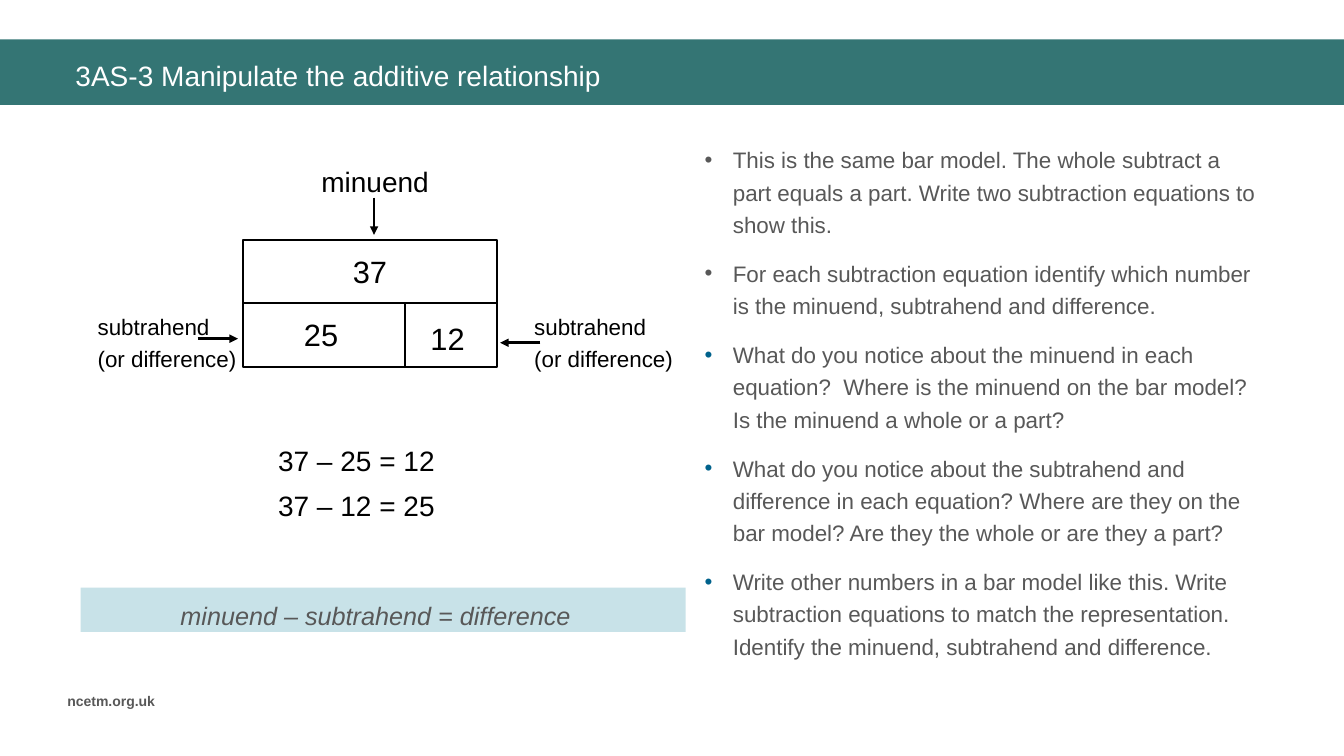
from dataclasses import dataclass

from lxml import etree
from pptx import Presentation
from pptx import util as u
from pptx.dml.color import RGBColor
from pptx.enum import shapes as kinds, text as txt
from pptx.oxml.ns import qn


@dataclass(frozen=True)
class Theme:
    font: str = "Arial"
    teal: str = "347574"
    pale: str = "C8E2E8"
    grey: str = "585858"
    blue: str = "00628C"
    black: str = "000000"
    white: str = "FFFFFF"
    footer: int = 10
    body: int = 16
    rule: int = 18
    heading: int = 20
    number: int = 22


@dataclass(frozen=True)
class Line:
    start: tuple[float, float]
    end: tuple[float, float]
    weight: float
    arrow: bool = False


@dataclass(frozen=True)
class Label:
    words: str
    box: tuple[float, float, float, float]
    size: int
    align: txt.PP_ALIGN = txt.PP_ALIGN.CENTER
    anchor: txt.MSO_ANCHOR = txt.MSO_ANCHOR.TOP
    spacing: float = 1.2
    wrap: bool = True


THEME = Theme()
LEFT, MIDDLE = txt.PP_ALIGN.LEFT, txt.MSO_ANCHOR.MIDDLE

prs = Presentation()
prs.slide_width, prs.slide_height = u.Inches(13.33), u.Inches(7.5)
slide = prs.slides.add_slide(prs.slide_layouts[6])


def add_bullet(paragraph, colour: str, indent: float = 0.28) -> None:
    props = paragraph._p.get_or_add_pPr()
    props.set("marL", str(u.Inches(indent)))
    props.set("indent", str(-u.Inches(indent)))
    tint = etree.SubElement(props, qn("a:buClr"))
    etree.SubElement(tint, qn("a:srgbClr"), val=colour)
    etree.SubElement(props, qn("a:buFont"), typeface=THEME.font)
    etree.SubElement(props, qn("a:buChar"), char="•")


def add_text(words: list[str], box: tuple[float, float, float, float], *, size: int,
             colour: str = THEME.black, bold: bool = False, italic: bool = False,
             align: txt.PP_ALIGN = LEFT, anchor: txt.MSO_ANCHOR = txt.MSO_ANCHOR.TOP,
             spacing: float = 1.0, before: float = 0, after: float = 0,
             wrap: bool = True, bullets: tuple[str, ...] = ()) -> None:
    frame = slide.shapes.add_textbox(*map(u.Inches, box)).text_frame
    frame.word_wrap, frame.vertical_anchor = wrap, anchor
    for index, line in enumerate(words):
        paragraph = frame.add_paragraph() if index else frame.paragraphs[0]
        paragraph.alignment, paragraph.line_spacing = align, spacing
        paragraph.space_before = u.Pt(before if index else 0)
        paragraph.space_after = u.Pt(after)
        if bullets:
            add_bullet(paragraph, bullets[index])
        run = paragraph.add_run()
        run.text = line
        run.font.name, run.font.size = THEME.font, u.Pt(size)
        run.font.bold, run.font.italic = bold, italic
        run.font.color.rgb = RGBColor.from_string(colour)


def add_rect(box: tuple[float, float, float, float], fill: str | None = None,
             weight: float = 0) -> None:
    rect = slide.shapes.add_shape(kinds.MSO_SHAPE.RECTANGLE, *map(u.Inches, box))
    rect.shadow.inherit = False
    if fill:
        rect.fill.solid()
        rect.fill.fore_color.rgb = RGBColor.from_string(fill)
    else:
        rect.fill.background()
    if weight:
        rect.line.color.rgb = RGBColor.from_string(THEME.black)
        rect.line.width = u.Pt(weight)
    else:
        rect.line.fill.background()


def add_line(line: Line) -> None:
    connector = slide.shapes.add_connector(
        kinds.MSO_CONNECTOR.STRAIGHT, *map(u.Inches, line.start + line.end))
    connector.line.color.rgb = RGBColor.from_string(THEME.black)
    connector.line.width = u.Pt(line.weight)
    if line.arrow:
        etree.SubElement(connector.line._get_or_add_ln(), qn("a:tailEnd"), type="triangle")
    etree.SubElement(connector._element.spPr, qn("a:effectLst"))


# Header band, title and footer
add_rect((0, 0.39, 13.33, 0.65), THEME.teal)
add_text(["3AS-3 Manipulate the additive relationship"], (0.65, 0.51, 12.32, 0.47),
         size=THEME.heading, colour=THEME.white, anchor=MIDDLE)
add_text(["ncetm.org.uk"], (0.57, 6.82, 1.21, 0.27),
         size=THEME.footer, colour=THEME.grey, bold=True)

# General rule on its pale strip
add_rect((0.8, 5.83, 6, 0.44), THEME.pale)
add_text(["minuend – subtrahend = difference"], (1.67, 5.85, 4.11, 0.43), size=THEME.rule,
         colour=THEME.grey, italic=True, align=txt.PP_ALIGN.CENTER, spacing=1.2, wrap=False)

# Subtraction equations
add_text(["37 – 25 = 12", "37 – 12 = 25"], (2.66, 4.28, 1.77, 0.94),
         size=THEME.heading, spacing=1.2, before=4, wrap=False)

# Questions
questions = [
    "This is the same bar model. The whole subtract a part equals a part. "
    "Write two subtraction equations to show this.",
    "For each subtraction equation identify which number is the minuend, "
    "subtrahend and difference.",
    "What do you notice about the minuend in each equation?  Where is the minuend "
    "on the bar model? Is the minuend a whole or a part?",
    "What do you notice about the subtrahend and difference in each equation? "
    "Where are they on the bar model? Are they the whole or are they a part?",
    "Write other numbers in a bar model like this. Write subtraction equations to match "
    "the representation. Identify the minuend, subtrahend and difference.",
]
add_text(questions, (6.89, 1.35, 5.72, 4.49), size=THEME.body, colour=THEME.grey,
         spacing=1.2, before=6, after=6, bullets=(THEME.grey,) * 2 + (THEME.blue,) * 3)

# Bar model: whole above, two parts below
bar_left, bar_top, bar_width, row = 2.41, 2.38, 2.52, 0.63
bar_middle, part_split = bar_top + row, 4.02
add_rect((bar_left, bar_top, bar_width, 2 * row), weight=1.5)
lines = [
    Line((part_split, bar_middle), (part_split, bar_middle + row), 1.5),
    Line((bar_left, bar_middle), (bar_left + bar_width, bar_middle), 1.5),
    Line((3.71, 1.96), (3.71, 2.33), 2, arrow=True),
    Line((1.96, 3.36), (2.36, 3.36), 2, arrow=True),
    Line((5.36, 3.4), (4.96, 3.4), 2, arrow=True),
]
for line in lines:
    add_line(line)

# Numbers and names of the bar model
labels = [
    Label("37", (3.3, 2.46, 0.74, 0.47), THEME.number, spacing=1),
    Label("25", (2.72, 3.08, 0.93, 0.48), THEME.number, anchor=MIDDLE, spacing=1),
    Label("12", (3.96, 3.12, 0.96, 0.47), THEME.number, anchor=MIDDLE, spacing=1),
    Label("minuend", (3.08, 1.52, 1.28, 0.47), THEME.heading, wrap=False),
    *(Label("subtrahend (or difference)", (left, 3, 1.61, 0.72), THEME.body, align=LEFT)
      for left in (0.87, 5.2)),
]
for label in labels:
    add_text([label.words], label.box, size=label.size, align=label.align,
             anchor=label.anchor, spacing=label.spacing, wrap=label.wrap)

prs.save("out.pptx")
